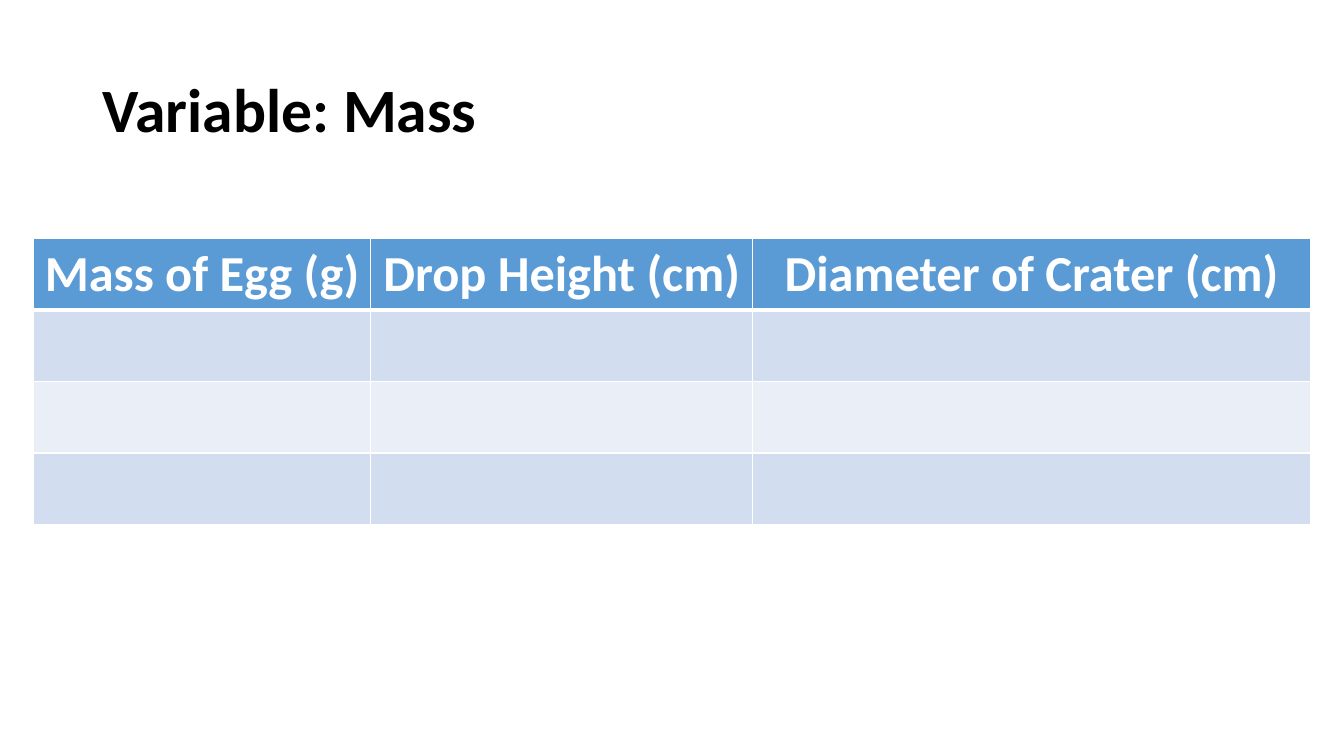
from lxml import etree
from pptx import Presentation
from pptx import util as u
from pptx.dml.color import RGBColor
from pptx.enum import text
from pptx.oxml import ns

PX = 9525  # EMU per px, 96 px to the inch
BLACK = RGBColor(0x00, 0x00, 0x00)
WHITE = RGBColor(0xFF, 0xFF, 0xFF)
HEADER_BLUE = RGBColor(0x5B, 0x9B, 0xD5)
BANDS = [RGBColor(0xEA, 0xEF, 0xF7), RGBColor(0xD2, 0xDE, 0xEF)]

HEADINGS = ["Mass of Egg (g)", "Drop Height (cm)", "Diameter of Crater (cm)"]
COLUMN_WIDTHS = [321, 364, 531]
ROW_HEIGHT = 68
ROW_COUNT = 4


def style_font(font, size, color):
    font.name = "Calibri"
    font.size = u.Pt(size)
    font.bold = True
    font.color.rgb = color


def add_borders(cell, widths):
    """Draw white borders; they must come before the fill in the cell properties."""
    properties = cell._tc.get_or_add_tcPr()
    for position, (side, width) in enumerate(widths.items()):
        line = etree.Element(ns.qn(f"a:ln{side}"), w=str(u.Pt(width)))
        fill = etree.SubElement(line, ns.qn("a:solidFill"))
        etree.SubElement(fill, ns.qn("a:srgbClr"), val=str(WHITE))
        properties.insert(position, line)


deck = Presentation()
deck.slide_width = 1280 * PX
deck.slide_height = 720 * PX
page = deck.slides.add_slide(deck.slide_layouts[5])

# Title
title = page.shapes.title
title.left, title.top, title.width, title.height = [
    length * PX for length in (88, 38, 1104, 139)]
frame = title.text_frame
frame.text = "Variable: Mass"
frame.auto_size = text.MSO_AUTO_SIZE.NONE
frame.vertical_anchor = text.MSO_ANCHOR.MIDDLE
para = frame.paragraphs[0]
para.alignment = text.PP_ALIGN.LEFT
para.line_spacing = 0.9
style_font(para.font, 44, BLACK)

# Table grid
table = page.shapes.add_table(
    ROW_COUNT, len(HEADINGS), 32 * PX, 227 * PX,
    sum(COLUMN_WIDTHS) * PX, ROW_COUNT * ROW_HEIGHT * PX).table
for column, width in zip(table.columns, COLUMN_WIDTHS):
    column.width = width * PX

# Cell fills and borders, with a thick rule under the header
for row_number, row in enumerate(table.rows):
    row.height = ROW_HEIGHT * PX
    for cell in row.cells:
        cell.fill.solid()
        cell.fill.fore_color.rgb = BANDS[row_number % 2] if row_number else HEADER_BLUE
        add_borders(cell, {"L": 1, "R": 1,
                           "T": 3 if row_number == 1 else 1,
                           "B": 3 if row_number == 0 else 1})

# Header text
for cell, heading in zip(table.rows[0].cells, HEADINGS):
    cell.text = heading
    para = cell.text_frame.paragraphs[0]
    para.alignment = text.PP_ALIGN.CENTER
    style_font(para.font, 36, WHITE)

deck.save("out.pptx")
